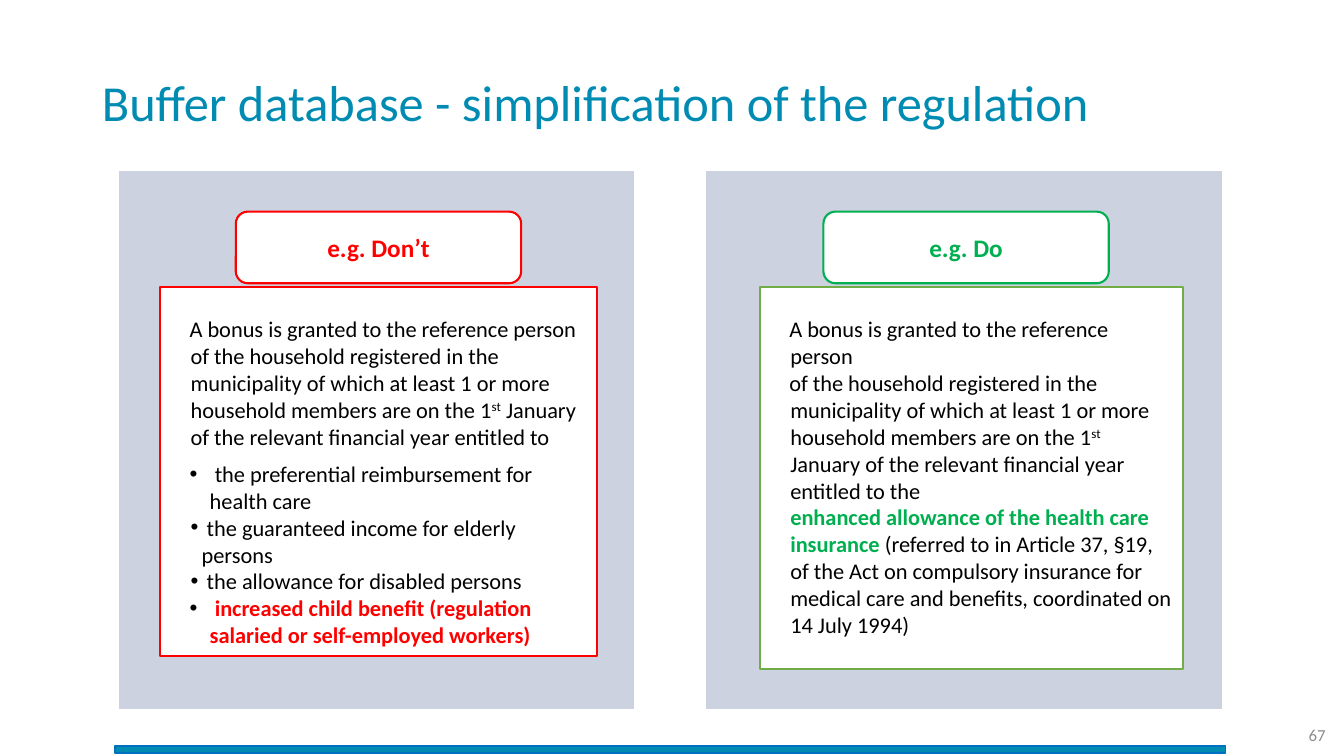
from lxml import etree
from pptx import Presentation
from pptx.dml.color import RGBColor
from pptx.enum.shapes import MSO_SHAPE
from pptx.enum.text import MSO_ANCHOR, MSO_AUTO_SIZE, PP_ALIGN
from pptx.oxml.ns import qn
from pptx.util import Inches, Pt

RECTANGLE, ROUNDED = MSO_SHAPE.RECTANGLE, MSO_SHAPE.ROUNDED_RECTANGLE
LEFT, CENTER, RIGHT = PP_ALIGN.LEFT, PP_ALIGN.CENTER, PP_ALIGN.RIGHT
TOP, MIDDLE = MSO_ANCHOR.TOP, MSO_ANCHOR.MIDDLE
NO_AUTOFIT = MSO_AUTO_SIZE.NONE

COLORS = {
    "teal": "008CB2", "blue": "0070C0", "navy": "002060", "white": "FFFFFF",
    "red": "FF0000", "green": "00B050", "leaf": "70AD47",
    "black": "000000", "gray": "8C8C8C",
}
SIDE_STEP = 43.72  # distance from the left half to the right half
TEXT_INDENT = (0.2, -0.01)
WIDE_BULLET = (0.39, -0.2)
NARROW_BULLET = (0.31, -0.11)


class SlideBuilder:
    """Places styled elements; boxes are left, top, width, height in percent."""

    font_name = "Calibri"

    def __init__(self, presentation, layout_index):
        self.width = presentation.slide_width
        self.height = presentation.slide_height
        layout = presentation.slide_layouts[layout_index]
        self.slide = presentation.slides.add_slide(layout)

    def color(self, name):
        return RGBColor.from_string(COLORS[name])

    def place(self, box):
        sides = (self.width, self.height) * 2
        return [round(side * share / 100) for side, share in zip(sides, box)]

    def paint(self, shape, fill, line, line_width):
        shape.fill.solid()
        shape.fill.fore_color.rgb = self.color(fill)
        shape.line.color.rgb = self.color(line)
        shape.line.width = Pt(line_width)

    def shape(self, kind, box, fill, line, line_width=1, alpha=None):
        shape = self.slide.shapes.add_shape(kind, *self.place(box))
        shape.shadow.inherit = False
        self.paint(shape, fill, line, line_width)
        if alpha is not None:
            color = shape.element.spPr.find(qn("a:solidFill"))[0]
            etree.SubElement(color, qn("a:alpha")).set("val", str(alpha * 1000))
        return shape

    def placeholder(self, index, box):
        """Moves a template placeholder into position, on top of the shapes."""
        placeholder = self.slide.placeholders[index]
        self.slide.shapes.element.append(placeholder.element)
        (placeholder.left, placeholder.top,
         placeholder.width, placeholder.height) = self.place(box)
        return placeholder

    def frame(self, shape, anchor=MIDDLE, top=0.05):
        frame = shape.text_frame
        frame.word_wrap = True
        frame.auto_size = NO_AUTOFIT
        frame.vertical_anchor = anchor
        frame.margin_left = frame.margin_right = Inches(0.1)
        frame.margin_top, frame.margin_bottom = Inches(top), Inches(0.05)
        return frame

    def run(self, paragraph, text, size, color="black", bold=False, raised=False):
        run = paragraph.add_run()
        run.text = text
        run.font.name = self.font_name
        run.font.size = Pt(size)
        run.font.bold = bold
        run.font.color.rgb = self.color(color)
        if raised:
            run.font.superscript = True
            run._r.get_or_add_rPr().set("baseline", "30000")

    def line(self, shape, text, size, color, align, bold=False, spacing=1.0):
        paragraph = self.frame(shape).paragraphs[0]
        paragraph.alignment = align
        paragraph.line_spacing = spacing
        self.run(paragraph, text, size, color, bold)

    def number(self, text, box):
        shape = self.slide.shapes.add_textbox(*self.place(box))
        self.line(shape, text, 12, "gray", RIGHT)

    def card(self, index, box, line, paragraphs):
        """Paragraphs are (indent, bullet, space before, runs)."""
        card = self.placeholder(index, box)
        self.paint(card, "white", line, 1.5)
        frame = self.frame(card, TOP, 0.28)
        for position, (indent, bullet, space, runs) in enumerate(paragraphs):
            paragraph = frame.paragraphs[0] if position == 0 else frame.add_paragraph()
            properties = paragraph._p.get_or_add_pPr()
            for key, length in zip(("marL", "indent"), indent):
                properties.set(key, str(Inches(length)))
            if bullet:
                etree.SubElement(properties, qn("a:buFont")).set("typeface", "Arial")
                etree.SubElement(properties, qn("a:buChar")).set("char", "•")
            else:
                etree.SubElement(properties, qn("a:buNone"))
            paragraph.alignment = LEFT
            paragraph.space_before = Pt(space)
            for text, *style in runs:
                if text == "\n":
                    paragraph.add_line_break()
                else:
                    self.run(paragraph, text, 16, *style)


DONT_TEXT = [
    (TEXT_INDENT, False, 0, [
        ("A bonus is granted to the reference person of the household registered "
         "in the municipality of which at least 1 or more household members are "
         "on the 1",),
        ("st", "black", False, True),
        (" January of the relevant financial year entitled to",)]),
    (WIDE_BULLET, True, 7.3, [(" the preferential reimbursement for health care",)]),
    (NARROW_BULLET, True, 0, [(" the guaranteed income for elderly persons",)]),
    (NARROW_BULLET, True, 0, [(" the allowance for disabled persons",)]),
    (WIDE_BULLET, True, 0, [
        (" ",),
        ("increased child benefit (regulation salaried or self-employed workers)",
         "red", True)]),
]
DO_TEXT = [
    (TEXT_INDENT, False, 0, [("A bonus is granted to the reference person",)]),
    (TEXT_INDENT, False, 0, [
        ("of the household registered in the municipality of which at least 1 or "
         "more household members are on the 1",),
        ("st", "black", False, True),
        (" January of the relevant financial year entitled to the",),
        ("\n",),
        ("enhanced allowance of the health care insurance ", "green", True),
        ("(referred to in Article 37, §19, of the Act on compulsory insurance for "
         "medical care and benefits, coordinated on 14 July 1994)",)]),
]


def main():
    presentation = Presentation()
    presentation.slide_width = Inches(13.33)
    presentation.slide_height = Inches(7.5)
    builder = SlideBuilder(presentation, 3)

    # Footer bar and slide number
    builder.shape(RECTANGLE, (8.55, 98.67, 82.65, 0.93), "teal", "blue")
    builder.number("67", (93.23, 94.53, 6.15, 5.33))

    # Title
    title = builder.placeholder(0, (6.83, 4.27, 86.25, 19.33))
    builder.line(title, "Buffer database - simplification of the regulation",
                 36, "teal", LEFT, spacing=0.9)

    # Panels with their labels
    for side, (label, color) in enumerate([("e.g. Don’t", "red"), ("e.g. Do", "green")]):
        shift = side * SIDE_STEP
        builder.shape(RECTANGLE, (8.78 + shift, 22.53, 38.48, 71.33),
                      "navy", "white", alpha=20)
        tag = builder.shape(ROUNDED, (17.55 + shift, 28, 21.23, 9.47),
                            "white", color, 1.5)
        builder.line(tag, label, 18, color, CENTER, bold=True)

    # Example texts
    builder.card(1, (11.93, 38, 32.48, 48.8), "red", DONT_TEXT)
    builder.card(2, (56.55, 38, 31.5, 50.53), "leaf", DO_TEXT)

    presentation.save("out.pptx")


if __name__ == "__main__":
    main()
